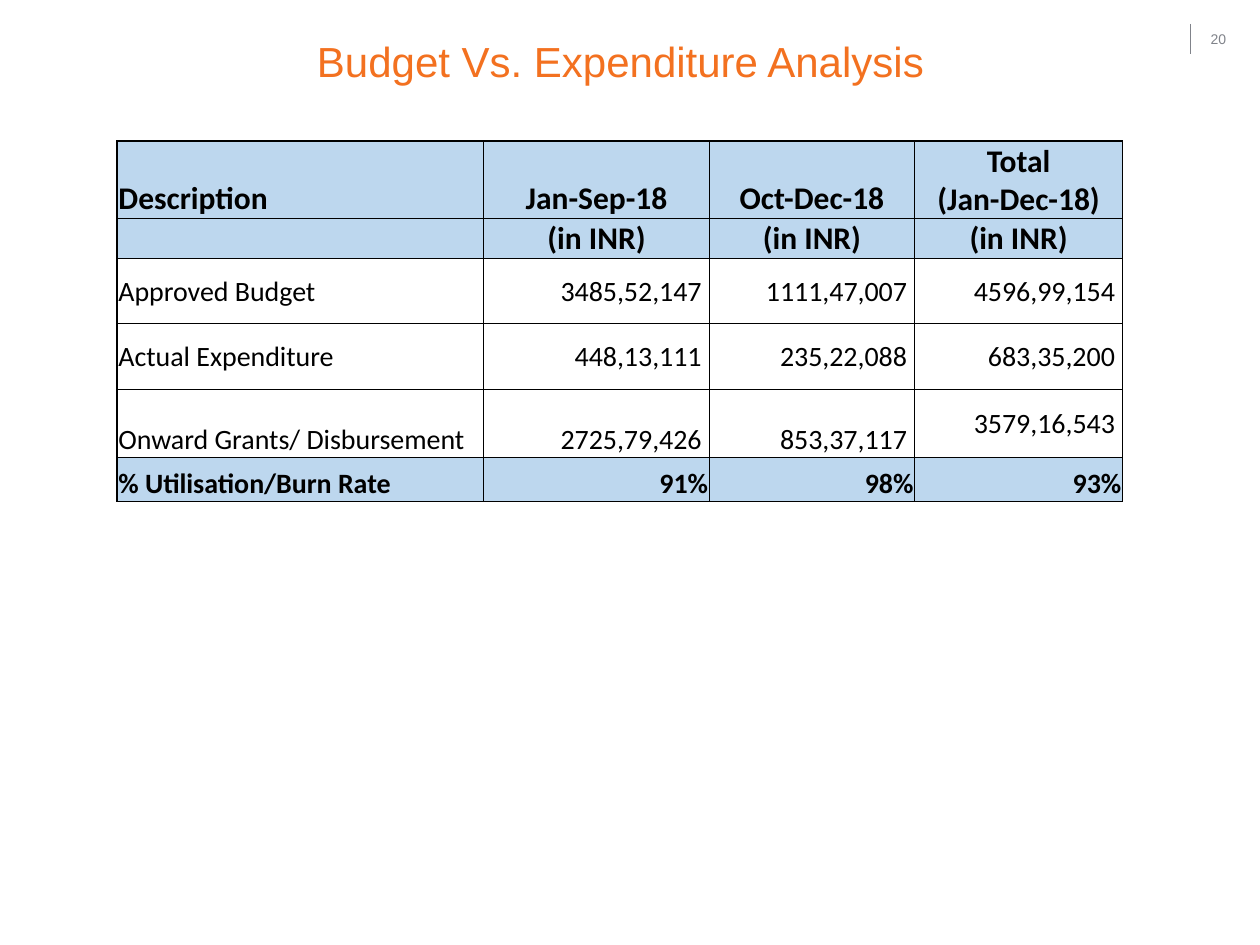
"""Build the budget versus expenditure slide."""
from lxml.etree import SubElement
from pptx import Presentation
from pptx.dml.color import RGBColor
from pptx.enum.shapes import MSO_CONNECTOR
from pptx.enum.text import MSO_ANCHOR, PP_ALIGN
from pptx.oxml import parse_xml
from pptx.oxml.ns import nsdecls, qn
from pptx.util import Inches, Pt

COLORS = {"title": "F37120", "grey": "80838A", "band": "BDD7EE", "black": "000000"}
TITLE = "Budget Vs. Expenditure Analysis"
PAGE_NUMBER = "20"
BUDGET_ROWS = [
    ("Description", "Jan-Sep-18", "Oct-Dec-18", "Total\v(Jan-Dec-18)"),
    ("", "(in INR)", "(in INR)", "(in INR)"),
    ("Approved Budget", "3485,52,147", "1111,47,007", "4596,99,154"),
    ("Actual Expenditure", "448,13,111", "235,22,088", "683,35,200"),
    ("Onward Grants/ Disbursement", "2725,79,426", "853,37,117", "3579,16,543"),
    ("% Utilisation/Burn Rate", "91%", "98%", "93%"),
]
COLUMN_WIDTHS = [2.91, 1.79, 1.63, 1.65]
ROW_HEIGHTS = [0.6, 0.32, 0.52, 0.52, 0.54, 0.35]
THICK_RULES = {0, 2, 5, 6}
HEADER = {"size": 18, "bold": True, "band": True, "align": PP_ALIGN.CENTER, "inset": 0.01}
AMOUNT = {"size": 16, "bold": False, "band": False, "align": PP_ALIGN.RIGHT, "inset": 0.06}
RATE = {"size": 16, "bold": True, "band": True, "align": PP_ALIGN.RIGHT, "inset": 0.01}
ROW_STYLES = [HEADER, HEADER, AMOUNT, AMOUNT, AMOUNT, RATE]
MIDDLE_CELLS = {(row, column) for row in (2, 3) for column in range(4)} | {(4, 3)}


def rgb(name):
    return RGBColor.from_string(COLORS[name])


def write(frame, text, font, size, color, align=PP_ALIGN.LEFT, bold=False):
    frame.text = text
    paragraph = frame.paragraphs[0]
    paragraph.alignment = align
    for run in paragraph.runs:
        for key, value in {"name": font, "size": Pt(size), "bold": bold}.items():
            setattr(run.font, key, value)
        run.font.color.rgb = rgb(color)


def add_label(slide, place, text, size, color, **options):
    frame = slide.shapes.add_textbox(*map(Inches, place)).text_frame
    frame.word_wrap = True
    write(frame, text, "Arial", size, color, **options)
    return frame


def set_borders(cell, widths):
    properties = cell._tc.get_or_add_tcPr()
    for index, (side, width) in enumerate(widths.items()):
        properties.insert(index, parse_xml(
            f'<a:ln{side} {nsdecls("a")} w="{Pt(width)}"><a:solidFill>'
            f'<a:srgbClr val="{COLORS["black"]}"/></a:solidFill></a:ln{side}>'))


def add_budget_table(slide):
    place = (0.93, 1.12, sum(COLUMN_WIDTHS), sum(ROW_HEIGHTS))
    table = slide.shapes.add_table(
        len(BUDGET_ROWS), len(COLUMN_WIDTHS), *map(Inches, place)).table
    table.first_row = table.horz_banding = False
    for column, width in zip(table.columns, COLUMN_WIDTHS):
        column.width = Inches(width)
    for row, height in zip(table.rows, ROW_HEIGHTS):
        row.height = Inches(height)
    last = len(COLUMN_WIDTHS) - 1
    for r, (texts, style) in enumerate(zip(BUDGET_ROWS, ROW_STYLES)):
        for c, text in enumerate(texts):
            cell = table.cell(r, c)
            layout = {
                "margin_left": Inches(0.01),
                "margin_top": Inches(0.01),
                "margin_right": Inches(style["inset"] if c else 0.01),
                "margin_bottom": 0,
                "vertical_anchor": MSO_ANCHOR.MIDDLE if (r, c) in MIDDLE_CELLS else MSO_ANCHOR.BOTTOM,
            }
            for key, value in layout.items():
                setattr(cell, key, value)
            write(cell.text_frame, text, "Calibri", style["size"], "black",
                  style["align"] if c else PP_ALIGN.LEFT, style["bold"])
            if style["band"]:
                cell.fill.solid()
                cell.fill.fore_color.rgb = rgb("band")
            else:
                cell.fill.background()
            thick = {"L": c == 0, "R": c == last, "T": r in THICK_RULES, "B": r + 1 in THICK_RULES}
            set_borders(cell, {side: 1 if heavy else 0.5 for side, heavy in thick.items()})


def main():
    deck = Presentation()
    deck.slide_width, deck.slide_height = Inches(10), Inches(7.5)
    slide = deck.slides.add_slide(deck.slide_layouts[6])

    add_label(slide, (9.51, 0.19, 0.39, 0.24), PAGE_NUMBER, 8, "grey")
    divider = slide.shapes.add_connector(
        MSO_CONNECTOR.STRAIGHT, *map(Inches, (9.45, 0.19, 9.45, 0.43)))
    divider.line.color.rgb = rgb("grey")
    divider.line.width = Pt(0.75)
    SubElement(divider._element.spPr, qn("a:effectLst"))

    title = add_label(slide, (0.66, 0.28, 8.53, 0.4), TITLE, 24, "title", align=PP_ALIGN.CENTER)
    for side in ("left", "top", "right", "bottom"):
        setattr(title, f"margin_{side}", 0)
    add_budget_table(slide)
    deck.save("out.pptx")


if __name__ == "__main__":
    main()
